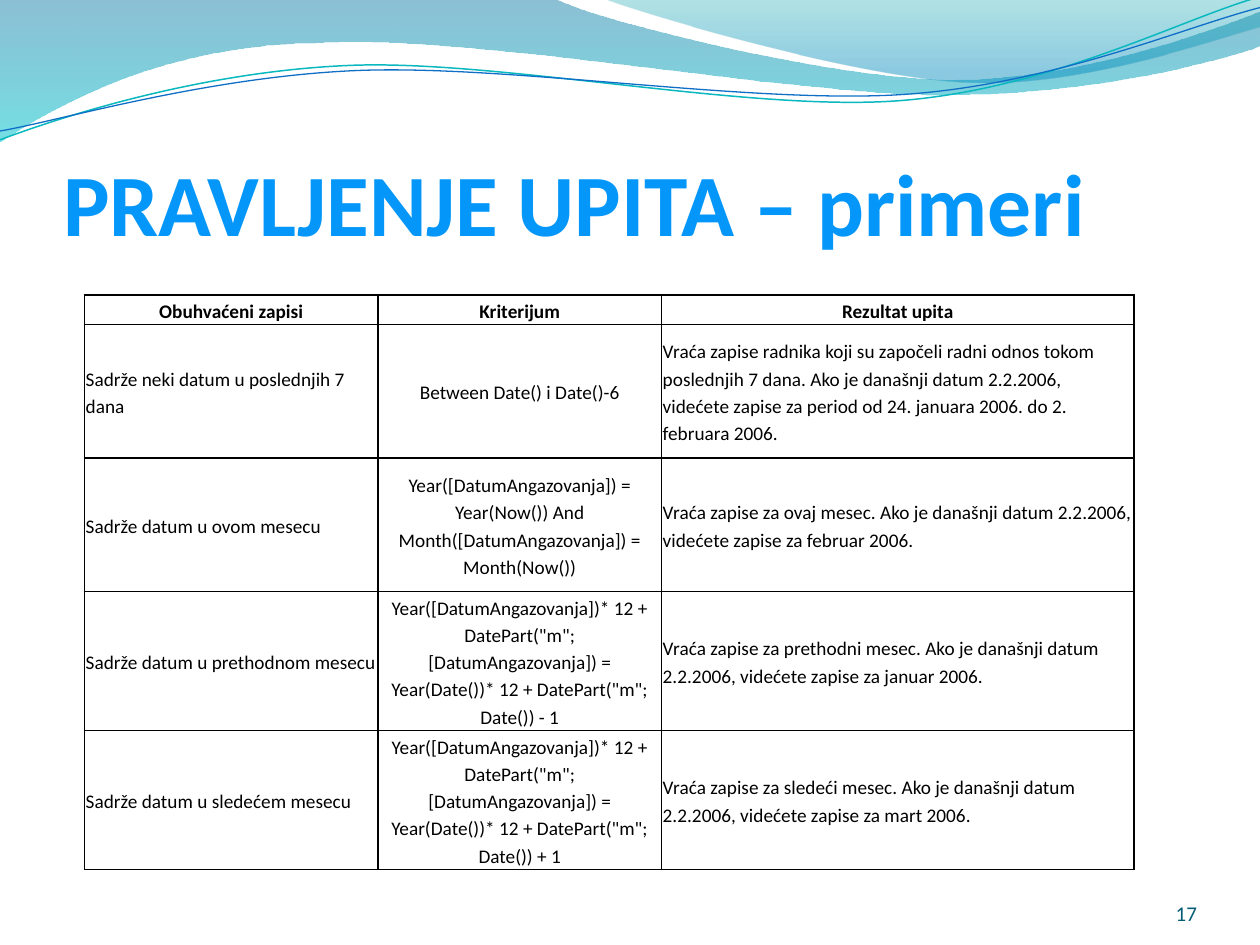
from math import cos, radians, sin

from lxml import etree
from pptx import Presentation
from pptx.dml.color import RGBColor
from pptx.enum import text as tx
from pptx.oxml import parse_xml
from pptx.oxml.ns import nsdecls, qn
from pptx.util import Inches, Pt

FONT = "Calibri"
MID = tx.MSO_ANCHOR.MIDDLE
LEFT, CENTER, RIGHT = tx.PP_ALIGN.LEFT, tx.PP_ALIGN.CENTER, tx.PP_ALIGN.RIGHT

# Each wave: start point, then points (line) or control triples (curve)
BAND = [[(0, -0.01)], [(4.4, -0.01)],
        [(4.76, 0.17), (6.64, 0.63), (7.58, 0.63)],
        [(8.53, 0.63), (9.58, 0.26), (10, 0.09)], [(10.01, 0.36)],
        [(9.83, 0.44), (8.7, 0.76), (7.46, 0.75)],
        [(6.22, 0.75), (3.82, 0.28), (2.57, 0.34)],
        [(1.29, 0.35), (0.46, 0.83), (-0.01, 1.13)], [(0, -0.01)]]
CREST = [[(4.79, -0.01)], [(5.09, 0.11), (6.82, 0.62), (7.69, 0.65)],
         [(8.56, 0.69), (9.61, 0.32), (10, 0.21)], [(10, 0)], [(4.79, -0.01)]]
TEAL = [[(0, 1.11)], [(0.48, 0.93), (1.58, 0.57), (2.77, 0.52)],
        [(3.95, 0.47), (5.93, 0.89), (7.13, 0.8)],
        [(8.33, 0.71), (9.38, 0.15), (9.98, -0.02)]]
BLUE = [[(0, 1.04)], [(0.47, 0.96), (1.64, 0.61), (2.83, 0.56)],
        [(4.03, 0.51), (5.97, 0.83), (7.17, 0.75)],
        [(8.36, 0.67), (9.41, 0.21), (10, 0.06)]]


def month(sign):
    return ('Year([DatumAngazovanja])* 12 + DatePart("m"; [DatumAngazovanja]) = '
            f'Year(Date())* 12 + DatePart("m"; Date()) {sign} 1')


ROWS = [
    ("Obuhvaćeni zapisi", "Kriterijum", "Rezultat upita"),
    ("Sadrže neki datum u poslednjih 7 dana", "Between Date() i Date()-6",
     "Vraća zapise radnika koji su započeli radni odnos tokom poslednjih 7 dana. "
     "Ako je današnji datum 2.2.2006, videćete zapise za period od 24. januara "
     "2006. do 2. februara 2006."),
    ("Sadrže datum u ovom mesecu",
     "Year([DatumAngazovanja]) = Year(Now()) And "
     "Month([DatumAngazovanja]) = Month(Now())",
     "Vraća zapise za ovaj mesec. Ako je današnji datum 2.2.2006, "
     "videćete zapise za februar 2006."),
    ("Sadrže datum u prethodnom mesecu", month("-"),
     "Vraća zapise za prethodni mesec. Ako je današnji datum 2.2.2006, "
     "videćete zapise za januar 2006."),
    ("Sadrže datum u sledećem mesecu", month("+"),
     "Vraća zapise za sledeći mesec. Ako je današnji datum 2.2.2006, "
     "videćete zapise za mart 2006."),
]


def color(hue):
    return RGBColor.from_string(hue)


def style(para, size, hue, align, bold=False):
    para.alignment = align
    for run in para.runs:
        font = run.font
        font.name, font.size, font.bold = FONT, Pt(size), bold
        font.color.rgb = color(hue)


def place(shape, x, y, w, h):
    shape.left, shape.top, shape.width, shape.height = map(Inches, (x, y, w, h))


def draw(slide, wave, box, close=False, turn=0):
    """Draw a wave with true curves inside a box that is turned by some degrees."""
    x, y, w, h = box
    pen = slide.shapes.build_freeform(0, 0)
    pen.add_line_segments([(Inches(w), Inches(h))], close=close)
    shape = pen.convert_to_shape()
    shape.shadow.inherit = False
    place(shape, *box)
    shape.rotation = turn
    trail = shape._element.find(".//" + qn("a:path"))
    for part in list(trail):
        trail.remove(part)
    trail.set("w", str(Inches(w)))
    trail.set("h", str(Inches(h)))
    co, si = cos(radians(-turn)), sin(radians(-turn))
    for i, seg in enumerate(wave):
        kind = "moveTo" if i == 0 else "cubicBezTo" if len(seg) == 3 else "lnTo"
        step = etree.SubElement(trail, qn(f"a:{kind}"))
        for px, py in seg:
            dx, dy = px - x - w / 2, py - y - h / 2
            etree.SubElement(step, qn("a:pt"),
                             x=str(Inches(w / 2 + dx * co - dy * si)),
                             y=str(Inches(h / 2 + dx * si + dy * co)))
    if close:
        etree.SubElement(trail, qn("a:close"))
    return shape


def fade(shape, stops):
    """Fill from top to bottom with stops of (place, colour, opacity)."""
    marks = "".join(
        f'<a:gs pos="{pos * 1000}"><a:srgbClr val="{hue}">'
        f'<a:alpha val="{alpha * 1000}"/></a:srgbClr></a:gs>'
        for pos, hue, alpha in stops)
    shape.fill.background()
    old = shape._element.spPr.find(qn("a:noFill"))
    old.getparent().replace(old, parse_xml(
        f'<a:gradFill {nsdecls("a")} rotWithShape="1"><a:gsLst>{marks}</a:gsLst>'
        '<a:lin ang="5400000" scaled="0"/></a:gradFill>'))


def add_waves(slide):
    # Filled bands
    for wave, box, stops in (
            (BAND, (-0.01, -0.01, 10.02, 1.14), [(0, "0074A1", 45), (100, "00C6CF", 55)]),
            (CREST, (4.79, -0.01, 5.21, 0.7), [(0, "00A1A9", 30), (80, "008BBF", 45)])):
        shape = draw(slide, wave, box, close=True)
        fade(shape, stops)
        shape.line.fill.background()
    # Thin curves
    for wave, box, hue, width in (
            (TEAL, (-0.02, 0.22, 10.02, 0.71), "0AB8BF", 0.85),
            (BLUE, (-0.02, 0.3, 10.03, 0.58), "0F6FC6", 0.75)):
        shape = draw(slide, wave, box, turn=357.3)
        shape.fill.background()
        shape.line.color.rgb = color(hue)
        shape.line.width = Pt(width)


def set_frame(frame, top=0):
    frame.word_wrap = True
    frame.auto_size = tx.MSO_AUTO_SIZE.NONE
    frame.vertical_anchor = tx.MSO_ANCHOR.BOTTOM
    frame.margin_left = frame.margin_right = frame.margin_bottom = 0
    frame.margin_top = Inches(top)


def add_title(slide, *box):
    title = slide.shapes.title
    place(title, *box)
    title.text_frame.text = "PRAVLJENJE UPITA – primeri"
    set_frame(title.text_frame, 0.05)
    style(title.text_frame.paragraphs[0], 50, "0497F9", LEFT, True)
    slide.shapes._spTree.append(title._element)  # in front of the waves


def add_number(slide, *box):
    label = slide.shapes.add_textbox(*map(Inches, box))
    label.text_frame.text = "17"
    set_frame(label.text_frame)
    style(label.text_frame.paragraphs[0], 12, "045C75", RIGHT)


def rule(cell):
    """Black one-point line on all four sides."""
    props = cell._tc.get_or_add_tcPr()
    for side in ("lnL", "lnR", "lnT", "lnB"):
        line = etree.SubElement(props, qn(f"a:{side}"), w=str(Pt(1)))
        fill = etree.SubElement(line, qn("a:solidFill"))
        etree.SubElement(fill, qn("a:srgbClr"), val="000000")


def add_grid(slide, *box):
    frame = slide.shapes.add_table(len(ROWS), 3, *map(Inches, box))
    grid = frame.table
    grid.first_row = grid.horz_banding = False
    for col, width in zip(grid.columns, (2.33, 2.25, 3.75)):
        col.width = Inches(width)
    for r, row in enumerate(ROWS):
        grid.rows[r].height = Inches(1.06 if r else 0.19)
        for c, words in enumerate(row):
            cell = grid.cell(r, c)
            cell.text_frame.text = words
            cell.vertical_anchor = MID
            cell.margin_left = cell.margin_right = Inches(0.01)
            cell.margin_top = cell.margin_bottom = Inches(0.01)
            rule(cell)
            cell.fill.background()
            para = cell.text_frame.paragraphs[0]
            para.line_spacing, para.space_after = 1.15, Pt(10)
            style(para, 11, "000000", CENTER if r == 0 or c == 1 else LEFT, r == 0)
    place(frame, *box)


def main():
    prs = Presentation()
    prs.slide_width, prs.slide_height = Inches(10), Inches(7.5)
    slide = prs.slides.add_slide(prs.slide_layouts[5])
    add_waves(slide)
    add_title(slide, 0.5, 0.77, 9, 1.25)
    add_number(slide, 8.67, 6.95, 0.83, 0.4)
    add_grid(slide, 0.67, 2.34, 8.33, 4.51)
    prs.save("out.pptx")


if __name__ == "__main__":
    main()
